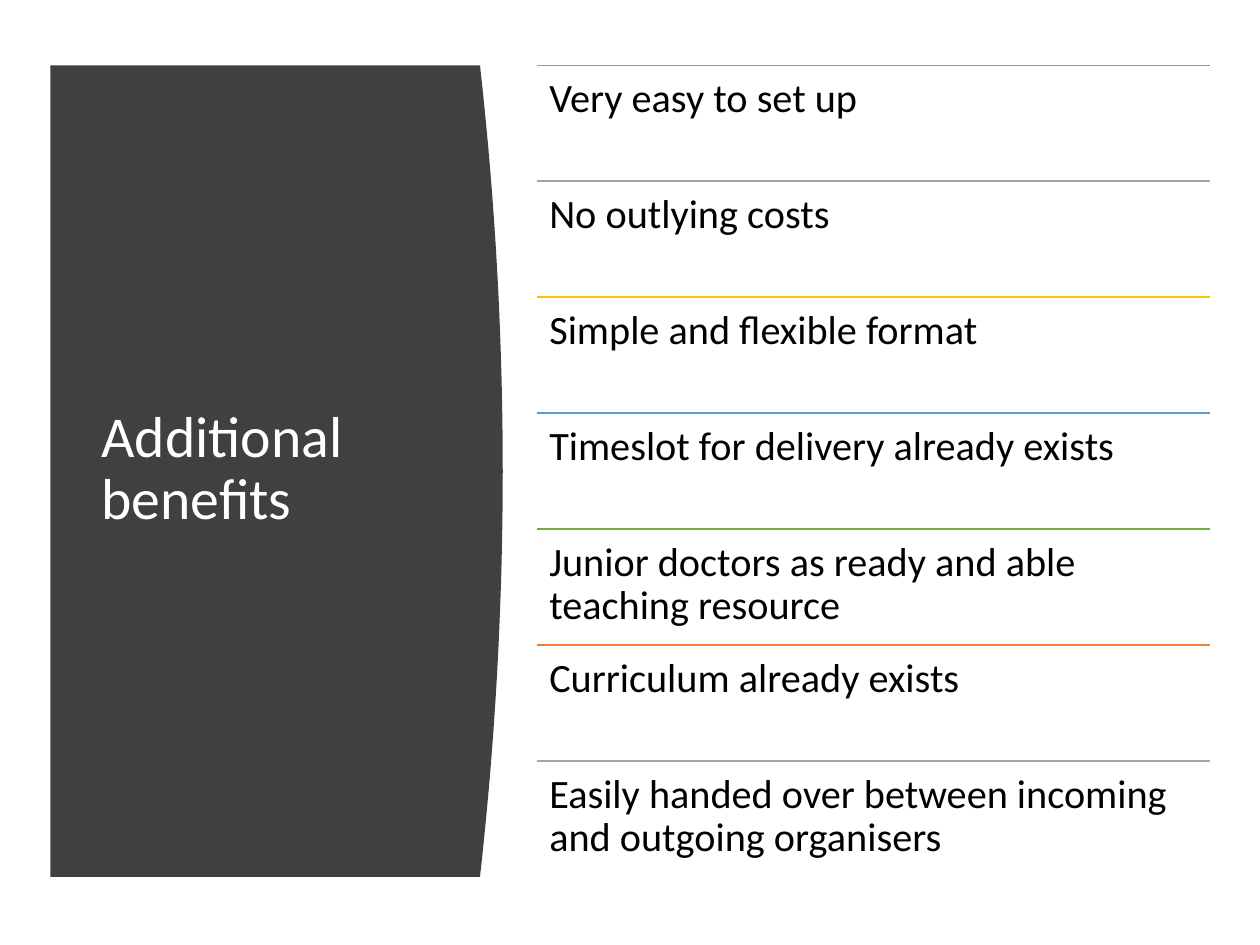
"""Build the slide on additional benefits: a curved title panel beside a ruled list."""
from pptx import Presentation
from pptx.dml.color import RGBColor
from pptx.enum.shapes import MSO_CONNECTOR
from pptx.enum.text import MSO_ANCHOR
from pptx.oxml.ns import qn
from pptx.util import Pt
from lxml.etree import SubElement

PANEL = RGBColor(0x40, 0x40, 0x40)
WHITE = RGBColor(0xFF, 0xFF, 0xFF)
BLACK = RGBColor(0x00, 0x00, 0x00)
ORANGE = RGBColor(0xED, 0x7D, 0x31)
GREY = RGBColor(0xA5, 0xA5, 0xA5)
GOLD = RGBColor(0xFF, 0xC0, 0x00)
BLUE = RGBColor(0x5B, 0x9B, 0xD5)
GREEN = RGBColor(0x70, 0xAD, 0x47)
RULE_COLOURS = [ORANGE, GREY, GOLD, BLUE, GREEN]

BENEFITS = [
    "Very easy to set up",
    "No outlying costs",
    "Simple and flexible format",
    "Timeslot for delivery already exists",
    "Junior doctors as ready and able teaching resource",
    "Curriculum already exists",
    "Easily handed over between incoming and outgoing organisers",
]

TOP, BOTTOM = 37.4, 501.1
PANEL_LEFT, PANEL_CORNER, BULGE = 28.8, 274.3, 13
CURVE_STEPS = 40
LIST_LEFT, LIST_WIDTH = 306.8, 384.4
ROW_HEIGHT = (BOTTOM - TOP) / len(BENEFITS)


def add_text(slide, text, left, top, width, height, size, colour):
    box = slide.shapes.add_textbox(Pt(left), Pt(top), Pt(width), Pt(height))
    frame = box.text_frame
    frame.word_wrap = True
    paragraph = frame.paragraphs[0]
    paragraph.text = text
    paragraph.line_spacing = 0.9
    paragraph.font.name = "Calibri"
    paragraph.font.size = Pt(size)
    paragraph.font.color.rgb = colour
    return frame


presentation = Presentation()
presentation.slide_width, presentation.slide_height = Pt(720), Pt(540)
slide = presentation.slides.add_slide(presentation.slide_layouts[6])

curve = []
for step in range(CURVE_STEPS + 1):
    share = step / CURVE_STEPS
    x = PANEL_CORNER + BULGE * 4 * share * (1 - share)
    curve.append((Pt(x), Pt(TOP + share * (BOTTOM - TOP))))
builder = slide.shapes.build_freeform(Pt(PANEL_LEFT), Pt(TOP))
builder.add_line_segments(curve + [(Pt(PANEL_LEFT), Pt(BOTTOM))], close=True)
panel = builder.convert_to_shape()
panel.shadow.inherit = False
panel.fill.solid()
panel.fill.fore_color.rgb = PANEL
panel.line.fill.background()

title = add_text(slide, "Additional benefits", 51, 80, 201.6, 377.3, 33, WHITE)
title.vertical_anchor = MSO_ANCHOR.MIDDLE

for row, benefit in enumerate(BENEFITS):
    top = TOP + row * ROW_HEIGHT
    rule = slide.shapes.add_connector(
        MSO_CONNECTOR.STRAIGHT,
        Pt(LIST_LEFT), Pt(top), Pt(LIST_LEFT + LIST_WIDTH), Pt(top),
    )
    rule.line.color.rgb = RULE_COLOURS[row % len(RULE_COLOURS)]
    rule.line.width = Pt(1)
    SubElement(rule._element.spPr, qn("a:effectLst"))
    item = add_text(slide, benefit, LIST_LEFT, top, LIST_WIDTH, ROW_HEIGHT, 23, BLACK)
    item.margin_top = item.margin_bottom = Pt(7.2)

presentation.save("out.pptx")
